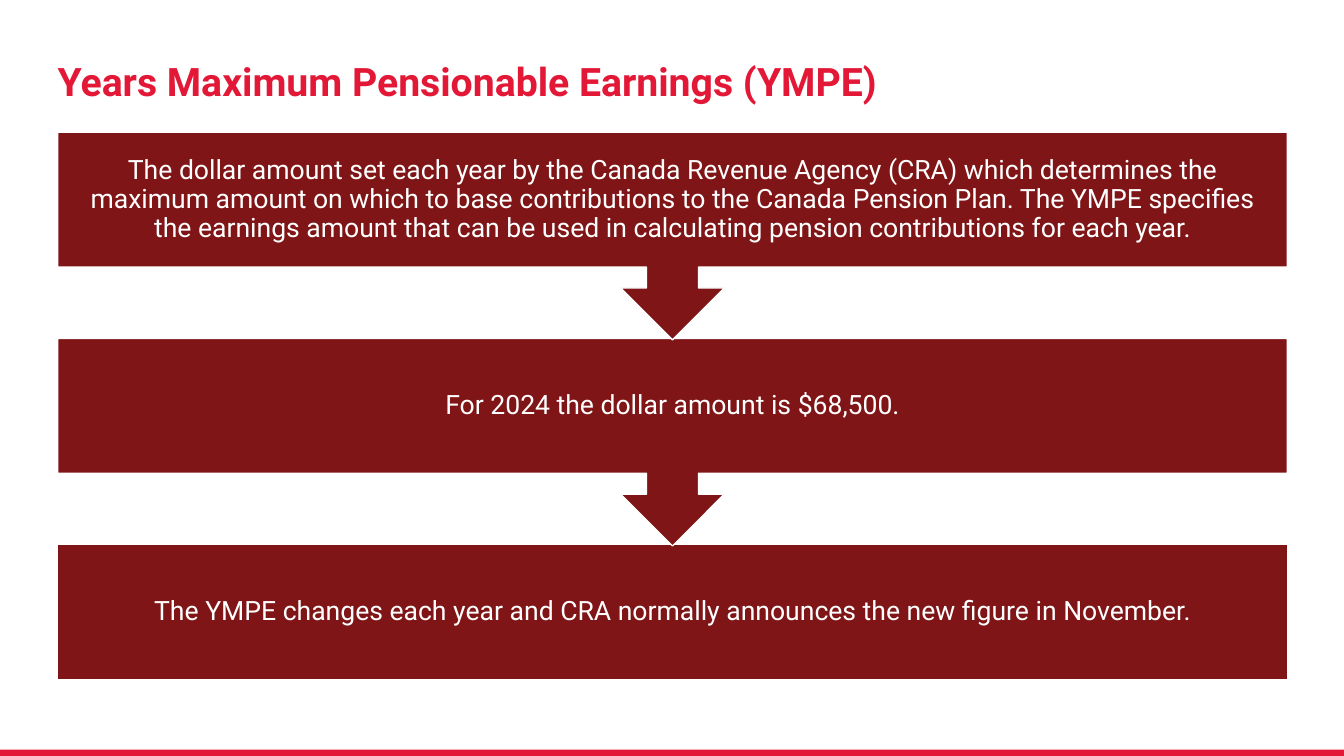
from dataclasses import dataclass

from pptx import Presentation, util as u
from pptx.dml.color import RGBColor
from pptx.enum import shapes, text
from pptx.slide import Slide
from pptx.text.text import TextFrame

COLOURS = {"red": "E31837", "maroon": "7F1516", "white": "FFFFFF"}
FONT = "Roboto"
SLIDE_WIDTH, SLIDE_HEIGHT = 960, 540
LEFT, CONTENT_WIDTH = 41.2, 878.4
FIRST_TOP, STEP_PITCH = 94.5, 147.2
BOX_HEIGHT, CALLOUT_HEIGHT = 96.4, 148.3
FOOTER_HEIGHT = 4.5


@dataclass
class Step:
    wording: str
    shape: shapes.MSO_SHAPE
    height: float


STEPS = [
    Step("The dollar amount set each year by the Canada Revenue Agency (CRA) which "
         "determines the maximum amount on which to base contributions to the Canada "
         "Pension Plan. The YMPE specifies the earnings amount that can be used in "
         "calculating pension contributions for each year.",
         shapes.MSO_SHAPE.DOWN_ARROW_CALLOUT, CALLOUT_HEIGHT),
    Step("For 2024 the dollar amount is $68,500.",
         shapes.MSO_SHAPE.DOWN_ARROW_CALLOUT, CALLOUT_HEIGHT),
    Step("The YMPE changes each year and CRA normally announces the new figure in November.",
         shapes.MSO_SHAPE.RECTANGLE, BOX_HEIGHT),
]


def colour(name: str) -> RGBColor:
    return RGBColor.from_string(COLOURS[name])


def write(frame: TextFrame, wording: str, size: float, ink: str, bold: bool,
          align: text.PP_ALIGN, anchor: text.MSO_ANCHOR, inset: float) -> None:
    frame.text = wording
    frame.word_wrap = True
    frame.auto_size = text.MSO_AUTO_SIZE.NONE
    frame.vertical_anchor = anchor
    frame.margin_left = frame.margin_right = u.Pt(inset)
    frame.margin_top = frame.margin_bottom = u.Pt(inset)
    paragraph = frame.paragraphs[0]
    paragraph.alignment = align
    paragraph.line_spacing = 0.9
    font = paragraph.runs[0].font
    font.name, font.size, font.bold = FONT, u.Pt(size), bold
    font.color.rgb = colour(ink)


def draw_footer(slide: Slide) -> None:
    footer = slide.shapes.add_shape(
        shapes.MSO_SHAPE.RECTANGLE, u.Pt(0), u.Pt(SLIDE_HEIGHT - FOOTER_HEIGHT),
        u.Pt(SLIDE_WIDTH), u.Pt(FOOTER_HEIGHT))
    footer.shadow.inherit = False
    footer.fill.solid()
    footer.fill.fore_color.rgb = colour("red")
    footer.line.fill.background()


def draw_step(slide: Slide, step: Step, top: float) -> None:
    box = slide.shapes.add_shape(step.shape, u.Pt(LEFT), u.Pt(top),
                                 u.Pt(CONTENT_WIDTH), u.Pt(step.height))
    box.shadow.inherit = False
    box.fill.solid()
    box.fill.fore_color.rgb = colour("maroon")
    box.line.color.rgb = colour("white")
    box.line.width = u.Pt(1)
    write(box.text_frame, step.wording, 19, "white", False,
          text.PP_ALIGN.CENTER, text.MSO_ANCHOR.MIDDLE, 10.8)


def main() -> None:
    deck = Presentation()
    deck.slide_width, deck.slide_height = u.Pt(SLIDE_WIDTH), u.Pt(SLIDE_HEIGHT)
    slide = deck.slides.add_slide(deck.slide_layouts.get_by_name("Title Only"))

    # Title
    heading = slide.shapes.title
    heading.left, heading.top = u.Pt(LEFT), u.Pt(18)
    heading.width, heading.height = u.Pt(CONTENT_WIDTH), u.Pt(56.9)
    write(heading.text_frame, "Years Maximum Pensionable Earnings (YMPE)", 28, "red", True,
          text.PP_ALIGN.LEFT, text.MSO_ANCHOR.BOTTOM, 0)

    # Footer bar
    draw_footer(slide)

    # Steps, last one first so that each arrow tip lies over the next box
    for index, step in reversed(list(enumerate(STEPS))):
        draw_step(slide, step, FIRST_TOP + index * STEP_PITCH)

    deck.save("out.pptx")


if __name__ == "__main__":
    main()
